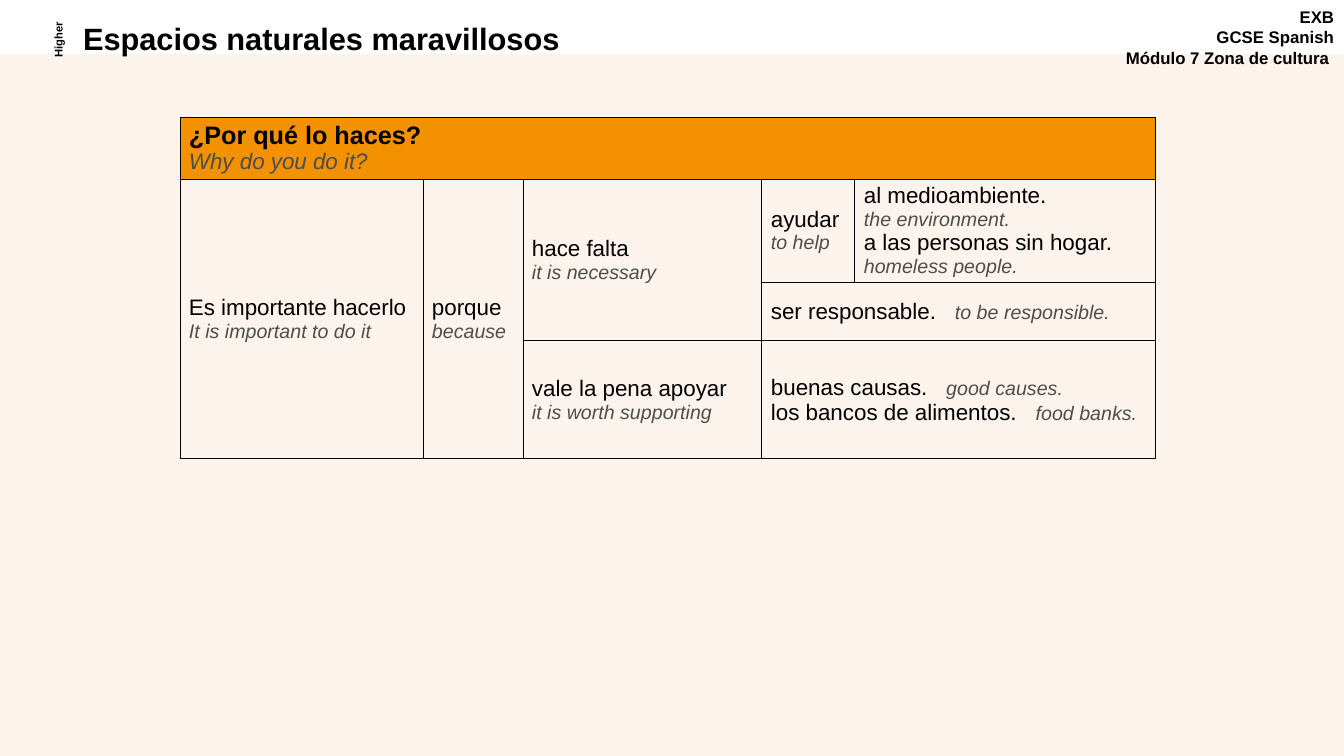
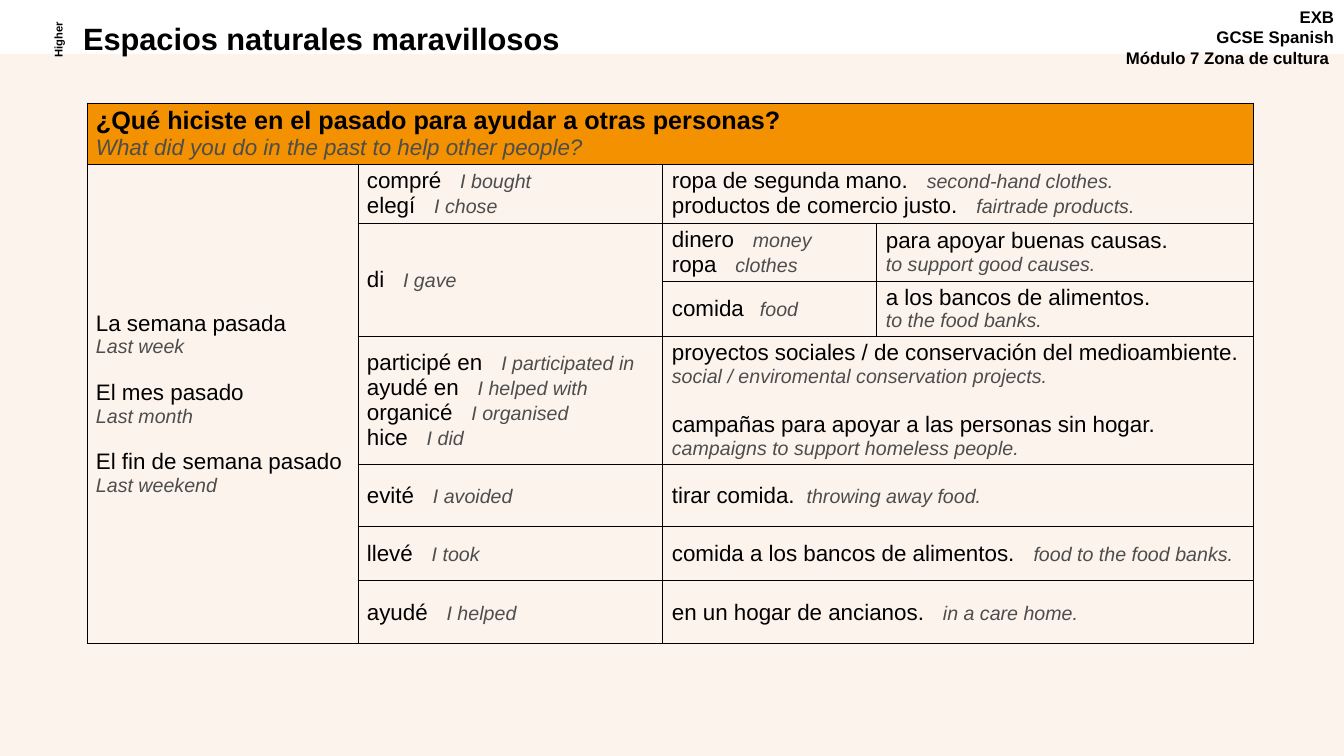
from dataclasses import dataclass

from lxml.etree import SubElement
from pptx import Presentation
from pptx.dml.color import RGBColor
from pptx.enum.shapes import MSO_SHAPE
from pptx.enum.text import MSO_ANCHOR, MSO_AUTO_SIZE, PP_ALIGN
from pptx.oxml.ns import qn
from pptx.util import Pt

WIDE, HIGH = 1344, 756
SCALE = 12192000 / WIDE


@dataclass(frozen=True)
class Theme:
    font: str = "Arial"
    ink: str = "000000"
    gray: str = "4D4D4C"
    cream: str = "FDF3ED"
    gold: str = "F39100"
    title: int = 22
    head: int = 18
    main: int = 16
    gloss: int = 14
    unit: int = 12
    tier: int = 8
    rule: float = 0.75


THEME = Theme()


@dataclass
class Entry:
    """Spanish and English pairs for one cell; a gap in points sets a pair on one line."""
    row: int
    col: int
    pairs: list
    down: int = 1
    wide: int = 1
    gap: int = 0
    rise: int = 0


def px(*sizes):
    return [round(size * SCALE) for size in sizes]


def color(code):
    return RGBColor.from_string(code)


def add_run(para, text, size, code=THEME.ink, bold=False, italic=False):
    run = para.add_run()
    run.text = text
    font = run.font
    font.name, font.size = THEME.font, Pt(size)
    font.bold, font.italic = bold, italic
    font.color.rgb = color(code)
    return run


def add_line(frame, first):
    return frame.paragraphs[0] if first else frame.add_paragraph()


def add_label(slide, box, lines, size, align, turn=0):
    shape = slide.shapes.add_textbox(*px(*box))
    shape.rotation = turn
    frame = shape.text_frame
    frame.word_wrap = True
    for i, text in enumerate(lines):
        para = add_line(frame, i == 0)
        para.alignment = align
        add_run(para, text, size, bold=True)
    return shape


def set_frame(slide, layout):
    """Draw the shared parts and hand them to the layout."""
    band = slide.shapes.add_shape(MSO_SHAPE.RECTANGLE, *px(0, 54, WIDE, HIGH - 54))
    band.shadow.inherit = False
    band.fill.solid()
    band.fill.fore_color.rgb = color(THEME.cream)
    band.line.fill.background()
    unit = add_label(slide, (1108, 2, 236, 78),
                     ["EXB", "GCSE Spanish", "Módulo 7 Zona de cultura "],
                     THEME.unit, PP_ALIGN.RIGHT)
    tier = add_label(slide, (18, 29, 79, 22), ["Higher"],
                     THEME.tier, PP_ALIGN.CENTER, 270)
    for num, part in enumerate((band, unit, tier), 20):
        part.element.nvSpPr.cNvPr.set("id", str(num))
        layout.shapes.element.append(part.element)


def set_title(slide, text):
    title = slide.shapes.title
    title.left, title.top, title.width, title.height = px(73, 19, 860, 43)
    frame = title.text_frame
    frame.auto_size = MSO_AUTO_SIZE.NONE
    frame.vertical_anchor = MSO_ANCHOR.TOP
    para = frame.paragraphs[0]
    para.alignment = PP_ALIGN.LEFT
    para.line_spacing = 0.9
    add_run(para, text, THEME.title, bold=True)


def style_cell(cell, fill=None):
    cell.vertical_anchor = MSO_ANCHOR.MIDDLE
    cell.margin_left, cell.margin_right = px(9, 9)
    cell.margin_top, cell.margin_bottom = px(4, 4)
    if fill:
        cell.fill.solid()
        cell.fill.fore_color.rgb = color(fill)
    else:
        cell.fill.background()
    props = cell._tc.get_or_add_tcPr()
    for i, side in enumerate(("lnL", "lnR", "lnT", "lnB")):
        line = SubElement(props, qn(f"a:{side}"), w=str(Pt(THEME.rule)))
        paint = SubElement(line, qn("a:solidFill"))
        SubElement(paint, qn("a:srgbClr"), val=THEME.ink)
        props.insert(i, line)


def write_pairs(frame, entry, main, gloss, bold):
    for i, (term, sense) in enumerate(entry.pairs):
        para = add_line(frame, i == 0)
        if i and entry.rise:
            para.space_before = Pt(entry.rise)
        add_run(para, term, main, bold=bold)
        if entry.gap:
            space = add_run(para, " ", main)
            space._r.get_or_add_rPr().set("spc", str(entry.gap * 100))
        else:
            para = frame.add_paragraph()
        add_run(para, sense, gloss, THEME.gray, italic=True)


def add_grid(slide, left, top, cols, rows, head, entries):
    shape = slide.shapes.add_table(len(rows), len(cols),
                                   *px(left, top, sum(cols), sum(rows)))
    table = shape.table
    table.first_row = table.horz_banding = False
    for col, size in zip(table.columns, px(*cols)):
        col.width = size
    for row, size in zip(table.rows, px(*rows)):
        row.height = size
    for i in range(len(rows)):
        for cell in table.rows[i].cells:
            style_cell(cell, None if i else THEME.gold)
    for entry in [Entry(0, 0, [head], wide=len(cols)), *entries]:
        cell = table.cell(entry.row, entry.col)
        if entry.down > 1 or entry.wide > 1:
            cell.merge(table.cell(entry.row + entry.down - 1,
                                  entry.col + entry.wide - 1))
        top_row = entry.row == 0
        sizes = (THEME.head, THEME.main) if top_row else (THEME.main, THEME.gloss)
        write_pairs(cell.text_frame, entry, *sizes, top_row)


REASONS = dict(
    left=180, top=117, cols=[243, 100, 239, 93, 301], rows=[62, 103, 59, 118],
    head=("¿Por qué lo haces?", "Why do you do it?"),
    entries=[
        Entry(1, 0, [("Es importante hacerlo", "It is important to do it")], down=3),
        Entry(1, 1, [("porque", "because")], down=3),
        Entry(1, 2, [("hace falta", "it is necessary")], down=2),
        Entry(1, 3, [("ayudar", "to help")]),
        Entry(1, 4, [("al medioambiente.", "the environment."),
                     ("a las personas sin hogar.", "homeless people.")]),
        Entry(2, 3, [("ser responsable.", "to be responsible.")], wide=2, gap=9),
        Entry(3, 2, [("vale la pena apoyar", "it is worth supporting")]),
        Entry(3, 3, [("buenas causas.", "good causes."),
                     ("los bancos de alimentos.", "food banks.")], wide=2, gap=9),
    ])

PAST = dict(
    left=87, top=103, cols=[271, 305, 214, 377],
    rows=[61, 59, 58, 55, 128, 63, 54, 63],
    head=("¿Qué hiciste en el pasado para ayudar a otras personas?",
          "What did you do in the past to help other people?"),
    entries=[
        Entry(1, 0, [("La semana pasada", "Last week"),
                     ("El mes pasado", "Last month"),
                     ("El fin de semana pasado", "Last weekend")], down=7, rise=16),
        Entry(1, 1, [("compré", "I bought"), ("elegí", "I chose")], gap=9),
        Entry(1, 2, [("ropa de segunda mano.", "second-hand clothes."),
                     ("productos de comercio justo.", "fairtrade products.")],
              wide=2, gap=9),
        Entry(2, 1, [("di", "I gave")], down=2, gap=9),
        Entry(2, 2, [("dinero", "money"), ("ropa", "clothes")], gap=9),
        Entry(2, 3, [("para apoyar buenas causas.", "to support good causes.")]),
        Entry(3, 2, [("comida", "food")], gap=7),
        Entry(3, 3, [("a los bancos de alimentos.", "to the food banks.")]),
        Entry(4, 1, [("participé en", "I participated in"),
                     ("ayudé en", "I helped with"),
                     ("organicé", "I organised"), ("hice", "I did")], gap=9),
        Entry(4, 2, [("proyectos sociales / de conservación del medioambiente.",
                      "social / enviromental conservation projects."),
                     ("campañas para apoyar a las personas sin hogar.",
                      "campaigns to support homeless people.")], wide=2, rise=18),
        Entry(5, 1, [("evité", "I avoided")], gap=9),
        Entry(5, 2, [("tirar comida.", "throwing away food.")], wide=2, gap=4),
        Entry(6, 1, [("llevé", "I took")], gap=9),
        Entry(6, 2, [("comida a los bancos de alimentos.",
                      "food to the food banks.")], wide=2, gap=9),
        Entry(7, 1, [("ayudé", "I helped")], gap=9),
        Entry(7, 2, [("en un hogar de ancianos.", "in a care home.")], wide=2, gap=9),
    ])


def main():
    deck = Presentation()
    deck.slide_width, deck.slide_height = px(WIDE, HIGH)
    layout = deck.slide_layouts.get_by_name("Title Only")
    for i, grid in enumerate((REASONS, PAST)):
        slide = deck.slides.add_slide(layout)
        if i == 0:
            set_frame(slide, layout)
        set_title(slide, "Espacios naturales maravillosos")
        add_grid(slide, **grid)
    deck.save("out.pptx")


if __name__ == "__main__":
    main()
